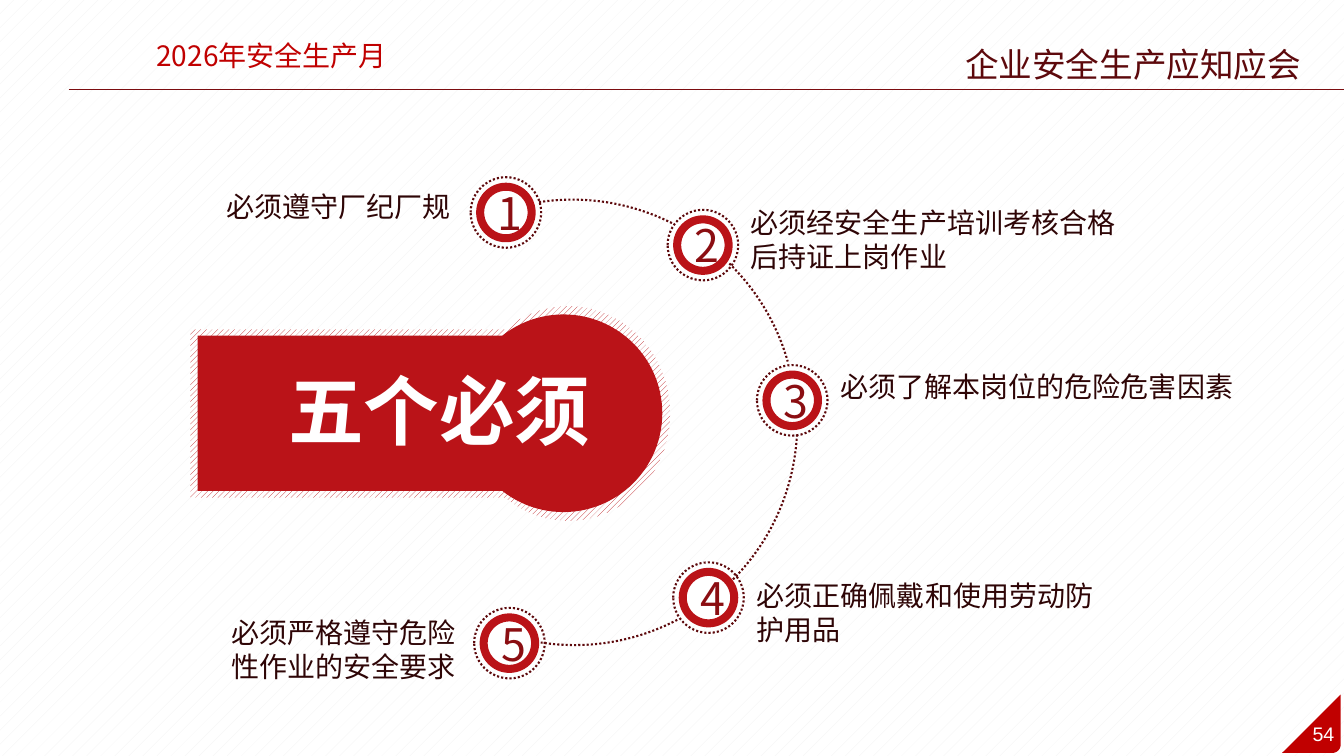
from math import asin, cos, degrees, radians, sin

from lxml.etree import SubElement
from pptx import Presentation
from pptx.dml.color import RGBColor
from pptx.enum.dml import MSO_LINE, MSO_PATTERN
from pptx.enum.shapes import MSO_CONNECTOR, MSO_SHAPE
from pptx.enum.text import MSO_ANCHOR, MSO_AUTO_SIZE, PP_ALIGN
from pptx.oxml.ns import qn
from pptx.util import Pt

WHITE = RGBColor(0xFF, 0xFF, 0xFF)
PALE_GREY = RGBColor(0xF2, 0xF2, 0xF2)
RED = RGBColor(0xBA, 0x13, 0x18)
BRIGHT_RED = RGBColor(0xC0, 0x00, 0x00)
NUMBER_RED = RGBColor(0x8B, 0x0E, 0x12)
RULE_RED = RGBColor(0x7C, 0x0D, 0x10)
DARK_RED = RGBColor(0x5D, 0x09, 0x0C)
INK = RGBColor(0x2E, 0x05, 0x06)
CJK = "Noto Sans CJK SC"

RING, DISC = 50.4, 36.8  # diameters of a numbered badge
ORBIT = 316.8  # diameter of the dotted path


def arc_points(cx, cy, rx, ry, start, end, steps):
    """Points on an ellipse, angles in degrees clockwise from the right."""
    angles = [radians(start + (end - start) * i / steps) for i in range(steps + 1)]
    return [(cx + rx * cos(a), cy + ry * sin(a)) for a in angles]


def keyhole(left, cx, cy, rx, ry, half_height):
    """A bar that runs into a round head on its right."""
    neck = 180 - degrees(asin(half_height / ry))
    head = arc_points(cx, cy, rx, ry, -neck, neck, 80)
    return [(left, cy + half_height), (left, cy - half_height)] + head


class SlidePainter:
    def __init__(self, slide):
        self.slide = slide
        self.shapes = slide.shapes

    def background(self):
        fill = self.slide.background.fill
        fill.patterned()
        fill.pattern = MSO_PATTERN.PERCENT_5
        fill.fore_color.rgb = PALE_GREY
        fill.back_color.rgb = WHITE

    def add_words(self, frame, words, size, color, align=PP_ALIGN.LEFT, font=CJK, bold=False):
        paragraph = frame.paragraphs[0]
        paragraph.alignment = align
        run = paragraph.add_run()
        run.text = words
        run.font.size = Pt(size)
        run.font.bold = bold
        run.font.color.rgb = color
        run.font.name = font
        SubElement(run.font._element, qn("a:ea"), typeface=font)

    def text(self, box, words, size, color, wrap=True, **style):
        frame = self.shapes.add_textbox(*map(Pt, box)).text_frame
        frame.word_wrap = wrap
        self.add_words(frame, words, size, color, **style)

    def title(self, box, words, size, color):
        title = self.shapes.title
        title.left, title.top, title.width, title.height = map(Pt, box)
        frame = title.text_frame
        frame.auto_size = MSO_AUTO_SIZE.NONE
        frame.vertical_anchor = MSO_ANCHOR.TOP
        self.add_words(frame, words, size, color, PP_ALIGN.CENTER)

    def rule(self, x1, y1, x2, y2, color, width):
        line = self.shapes.add_connector(MSO_CONNECTOR.STRAIGHT, *map(Pt, (x1, y1, x2, y2)))
        line.line.color.rgb = color
        line.line.width = Pt(width)
        SubElement(line._element.spPr, qn("a:effectLst"))

    def preset(self, kind, cx, cy, diameter, line, width, fill=None, dash=None):
        corner = (cx - diameter / 2, cy - diameter / 2)
        shape = self.shapes.add_shape(kind, *map(Pt, (*corner, diameter, diameter)))
        shape.shadow.inherit = False
        if fill is None:
            shape.fill.background()
        else:
            shape.fill.solid()
            shape.fill.fore_color.rgb = fill
        shape.line.color.rgb = line
        shape.line.width = Pt(width)
        if dash is not None:
            shape.line.dash_style = dash
        return shape

    def dotted(self, kind, cx, cy, diameter):
        return self.preset(kind, cx, cy, diameter, DARK_RED, 1.5, dash=MSO_LINE.ROUND_DOT)

    def badge(self, number, cx, cy):
        self.dotted(MSO_SHAPE.OVAL, cx, cy, RING)
        disc = self.preset(MSO_SHAPE.OVAL, cx, cy, DISC, RED, 5.75, WHITE)
        disc.text_frame.vertical_anchor = MSO_ANCHOR.MIDDLE
        self.add_words(disc.text_frame, number, 32, NUMBER_RED, PP_ALIGN.CENTER)

    def outline(self, points, color, pattern=None):
        start, *rest = [(Pt(x), Pt(y)) for x, y in points]
        builder = self.shapes.build_freeform(*start)
        builder.add_line_segments(rest, close=True)
        shape = builder.convert_to_shape()
        shape.shadow.inherit = False
        shape.line.fill.background()
        if pattern is None:
            shape.fill.solid()
        else:
            shape.fill.patterned()
            shape.fill.pattern = pattern
            shape.fill.back_color.rgb = WHITE
        shape.fill.fore_color.rgb = color


def main():
    deck = Presentation()
    deck.slide_width, deck.slide_height = Pt(960), Pt(540)
    painter = SlidePainter(deck.slides.add_slide(deck.slide_layouts[5]))
    painter.background()

    # Header
    painter.rule(49, 64.1, 960, 64.1, RULE_RED, 0.75)
    painter.text((70.6, 23.8, 247, 31.5), "2026年安全生产月", 20, BRIGHT_RED,
                 align=PP_ALIGN.CENTER)
    painter.title((662.4, 27.4, 294, 36.3), "企业安全生产应知应会", 24, DARK_RED)

    # Page number corner
    corner = arc_points(951.8, 532, 5.8, 5.8, 0, 90, 10)
    painter.outline([(957.6, 496.1), *corner, (915.8, 537.8)], BRIGHT_RED)
    painter.text((929.5, 511.9, 31.7, 24.2), "54", 14, WHITE, wrap=False,
                 align=PP_ALIGN.CENTER, font="Arial")

    # Dotted path between the badges
    for cx, cy, start, end in (
        (409, 301, 156.78, 178.19),
        (410.4, 301.7, 188.58, 206.46),
        (411.1, 302.4, 1.74, 26.87),
        (410.4, 302.4, 37.44, 59.25),
    ):
        arc = painter.dotted(MSO_SHAPE.ARC, cx, cy, ORBIT)
        arc.adjustments[0], arc.adjustments[1] = start, end

    # Five rules: badge centre, label box, wording
    rules = (
        ((361.4, 151.8), (154.8, 131.8, 182.2, 31.5), "必须遵守厂纪厂规"),
        ((502.1, 175.1), (529.2, 143.3, 283.7, 55.4), "必须经安全生产培训考核合格后持证上岗作业"),
        ((565.9, 286), (593.3, 260.6, 313.2, 31.5), "必须了解本岗位的危险危害因素"),
        ((506.1, 426.9), (533.5, 409.7, 264.2, 55.4), "必须正确佩戴和使用劳动防护用品"),
        ((363.9, 459.4), (158.4, 436.3, 180.7, 55.4), "必须严格遵守危险性作业的安全要求"),
    )
    for number, (centre, label_box, wording) in enumerate(rules, 1):
        painter.badge(str(number), *centre)
        painter.text(label_box, wording, 20, INK)

    # Central heading with its hatched border
    painter.outline(keyhole(136.1, 406.1, 295.4, 72.7, 76.7, 60.1), RED,
                    MSO_PATTERN.WIDE_UPWARD_DIAGONAL)
    painter.outline(keyhole(141.1, 402.5, 295.2, 70.6, 70.6, 55.4), RED)
    painter.text((198.7, 256.3, 301.7, 72.7), "五个必须", 54, WHITE, bold=True)

    deck.save("out.pptx")


if __name__ == "__main__":
    main()
